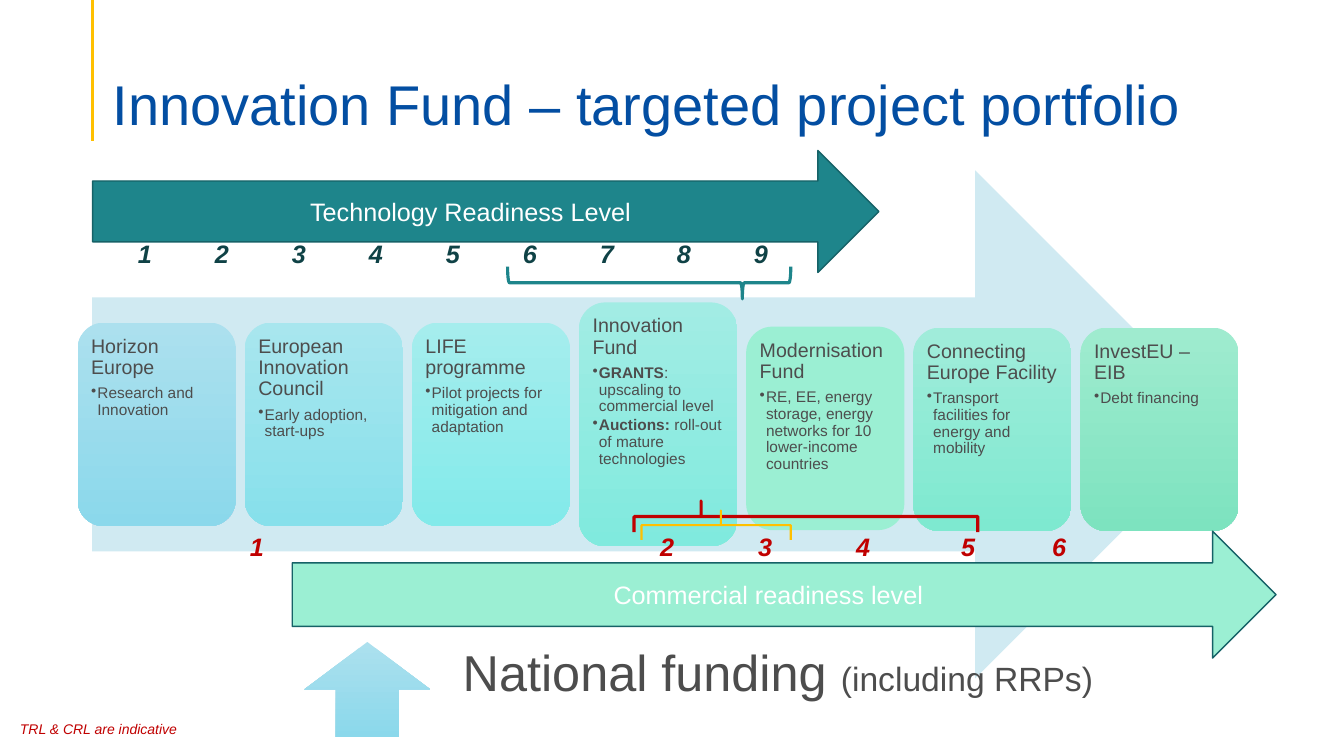
from dataclasses import dataclass

from lxml.etree import SubElement
from pptx import Presentation
from pptx.dml.color import RGBColor
from pptx.enum.shapes import MSO_CONNECTOR, MSO_SHAPE
from pptx.enum.text import MSO_ANCHOR, PP_ALIGN
from pptx.oxml.ns import qn
from pptx.util import Pt


@dataclass(frozen=True)
class Theme:
    font: str = "Arial"
    blue: str = "034EA2"
    teal: str = "1E858B"
    dark_teal: str = "0F4246"
    outline: str = "166267"
    mint: str = "9BEFD3"
    pale_blue: str = "D0EAF2"
    sky: tuple = ("ACE0EE", "8BD8EB")
    red: str = "C00000"
    amber: str = "FFC000"
    grey: str = "4D4D4D"
    white: str = "FFFFFF"
    title: int = 40
    funding: int = 36
    funding_detail: int = 24
    label: int = 18
    heading: int = 14
    body: int = 11
    note: int = 10


THEME = Theme()

CARD_LEFT, CARD_PITCH, CARD_WIDTH = 55.4, 119.4, 113
# Top, height, fill colours, heading, bullets as (bold part, plain part)
CARDS = [
    (230.4, 145.4, THEME.sky, "Horizon Europe", [("", "Research and Innovation")]),
    (230.4, 145.4, ("A8E6EE", "87E0EB"), "European Innovation Council",
     [("", "Early adoption, start-ups")]),
    (230.4, 145.4, ("A5EDED", "83EAEA"), "LIFE programme",
     [("", "Pilot projects for mitigation and adaptation")]),
    (216, 174.2, ("A2ECE4", "80EADE"), "Innovation Fund",
     [("GRANTS", ": upscaling to commercial level"),
      ("Auctions: ", "roll-out of mature technologies")]),
    (233.3, 145.4, (THEME.mint,), "Modernisation Fund",
     [("", "RE, EE, energy storage, energy networks for 10 lower-income countries")]),
    (234, 145.4, ("A0ECDA", "7EE9D0"), "Connecting Europe Facility",
     [("", "Transport facilities for energy and mobility")]),
    (234, 145.4, ("9FEBCF", "7DE3BF"), "InvestEU – EIB", [("", "Debt financing")]),
]

TECHNOLOGY_STOPS = [55 * step for step in range(1, 9)]
COMMERCIAL_STOPS = [293, 363, 433, 508, 573]


def rgb(colour):
    return RGBColor.from_string(colour)


def add_run(paragraph, text, size, colour, bold=False, italic=False):
    run = paragraph.add_run()
    run.text = text
    run.font.name = THEME.font
    run.font.size = Pt(size)
    run.font.bold = bold
    run.font.italic = italic
    run.font.color.rgb = rgb(colour)


def set_frame(text_frame, anchor, insets):
    text_frame.word_wrap = True
    text_frame.vertical_anchor = anchor
    (text_frame.margin_left, text_frame.margin_top,
     text_frame.margin_right, text_frame.margin_bottom) = [Pt(inset) for inset in insets]


def add_shape(slide, kind, box, colours=(), line=None, line_width=1):
    """Add a shape with no, one or two (top to bottom gradient) fill colours."""
    shape = slide.shapes.add_shape(kind, *[Pt(length) for length in box])
    shape.shadow.inherit = False
    if len(colours) == 2:
        shape.fill.gradient()
        shape.fill.gradient_angle = 270
        for stop, colour in zip(shape.fill.gradient_stops, colours):
            stop.color.rgb = rgb(colour)
    elif colours:
        shape.fill.solid()
        shape.fill.fore_color.rgb = rgb(colours[0])
    else:
        shape.fill.background()
    if line:
        shape.line.color.rgb = rgb(line)
        shape.line.width = Pt(line_width)
    else:
        shape.line.fill.background()
    return shape


def add_text(slide, box, anchor=MSO_ANCHOR.TOP, insets=(7.2, 3.6, 7.2, 3.6)):
    """Add an empty text box and return its first paragraph."""
    text_box = slide.shapes.add_textbox(*[Pt(length) for length in box])
    set_frame(text_box.text_frame, anchor, insets)
    return text_box.text_frame.paragraphs[0]


def add_level_arrow(slide, box, colour, label):
    arrow = add_shape(slide, MSO_SHAPE.RIGHT_ARROW, box, (colour,), THEME.outline)
    paragraph = arrow.text_frame.paragraphs[0]
    paragraph.alignment = PP_ALIGN.CENTER
    add_run(paragraph, label, THEME.label, THEME.white)


def add_scale(slide, box, stops, colour):
    """Add the numbers 1, 2, 3... with one tab stop for each after the first."""
    paragraph = add_text(slide, box)
    tabs = SubElement(paragraph._p.get_or_add_pPr(), qn("a:tabLst"))
    for stop in stops:
        SubElement(tabs, qn("a:tab"), pos=str(Pt(stop)), algn="l")
    numbers = "\t".join(str(number) for number in range(1, len(stops) + 2))
    add_run(paragraph, numbers, THEME.label, colour, bold=True, italic=True)


def add_brace(slide, box, rotation, adjustments, colour, width):
    brace = add_shape(slide, MSO_SHAPE.LEFT_BRACE, box, line=colour, line_width=width)
    brace.rotation = rotation
    for index, value in enumerate(adjustments):
        brace.adjustments[index] = value


def make_bullet(paragraph):
    paragraph.level = 1
    properties = paragraph._p.get_or_add_pPr()
    properties.set("marL", str(Pt(4.5)))
    properties.set("indent", str(-Pt(4.5)))
    SubElement(properties, qn("a:buChar"), char="•")


def add_card(slide, left, top, height, colours, heading, bullets):
    card = add_shape(slide, MSO_SHAPE.ROUNDED_RECTANGLE,
                     (left, top, CARD_WIDTH, height), colours)
    text_frame = card.text_frame
    set_frame(text_frame, MSO_ANCHOR.TOP, (4.2, 4.2, 4.2, 4.2))
    paragraph = text_frame.paragraphs[0]
    paragraph.space_after = Pt(5)
    add_run(paragraph, heading, THEME.heading, THEME.grey)
    for strong, plain in bullets:
        paragraph = text_frame.add_paragraph()
        make_bullet(paragraph)
        paragraph.space_after = Pt(1.7)
        if strong:
            add_run(paragraph, strong, THEME.body, THEME.grey, bold=True)
        add_run(paragraph, plain, THEME.body, THEME.grey)
    for paragraph in text_frame.paragraphs:
        paragraph.alignment = PP_ALIGN.LEFT
        paragraph.line_spacing = 0.9


def add_title(slide):
    rule = slide.shapes.add_connector(MSO_CONNECTOR.STRAIGHT, Pt(66.2), Pt(0), Pt(66.2), Pt(100.8))
    rule.line.color.rgb = rgb(THEME.amber)
    rule.line.width = Pt(2.25)
    SubElement(rule._element.spPr, qn("a:effectLst"))
    paragraph = add_text(slide, (73.4, 36.7, 828, 61.9), MSO_ANCHOR.BOTTOM, (7.2, 3.6, 7.2, 0))
    paragraph.line_spacing = 0.9
    add_run(paragraph, "Innovation Fund – targeted project portfolio", THEME.title, THEME.blue)


def add_national_funding(slide):
    add_shape(slide, MSO_SHAPE.UP_ARROW, (217.4, 458.6, 90, 67.7), THEME.sky)
    paragraph = add_text(slide, (310.3, 458.6, 494.6, 67.7), MSO_ANCHOR.MIDDLE, (20.2, 0, 20.2, 20.2))
    paragraph.line_spacing = 0.9
    add_run(paragraph, "National funding ", THEME.funding, THEME.grey)
    add_run(paragraph, "(including RRPs)", THEME.funding_detail, THEME.grey)


def main():
    presentation = Presentation()
    presentation.slide_width, presentation.slide_height = Pt(960), Pt(540)
    slide = presentation.slides.add_slide(presentation.slide_layouts[6])

    add_shape(slide, MSO_SHAPE.RIGHT_ARROW, (65.8, 121.7, 812.2, 362.9), (THEME.pale_blue,))
    for index, card in enumerate(CARDS):
        add_card(slide, CARD_LEFT + index * CARD_PITCH, *card)
    add_national_funding(slide)

    add_level_arrow(slide, (66.2, 107.5, 561.6, 87.1), THEME.teal, "Technology Readiness Level")
    add_level_arrow(slide, (208.8, 379.4, 702.7, 90.7), THEME.mint, "Commercial readiness level")
    add_scale(slide, (91.4, 167, 468.7, 29), TECHNOLOGY_STOPS, THEME.dark_teal)
    add_scale(slide, (171.4, 375.8, 730, 29), COMMERCIAL_STOPS, THEME.red)

    add_brace(slide, (452.2, 100.8, 23, 202.3), 270, (0.058, 0.829), THEME.teal, 2.25)
    add_brace(slide, (564.5, 246.2, 22.3, 245.5), 90, (0, 0.805), THEME.red, 2.25)
    note = add_text(slide, (7.2, 511.2, 233.3, 19.4))
    add_run(note, "TRL & CRL are indicative", THEME.note, THEME.red, italic=True)
    add_title(slide)
    add_brace(slide, (501.1, 321.8, 20.9, 106.6), 90, (0, 0.469), THEME.amber, 1.5)

    presentation.save("out.pptx")


if __name__ == "__main__":
    main()
